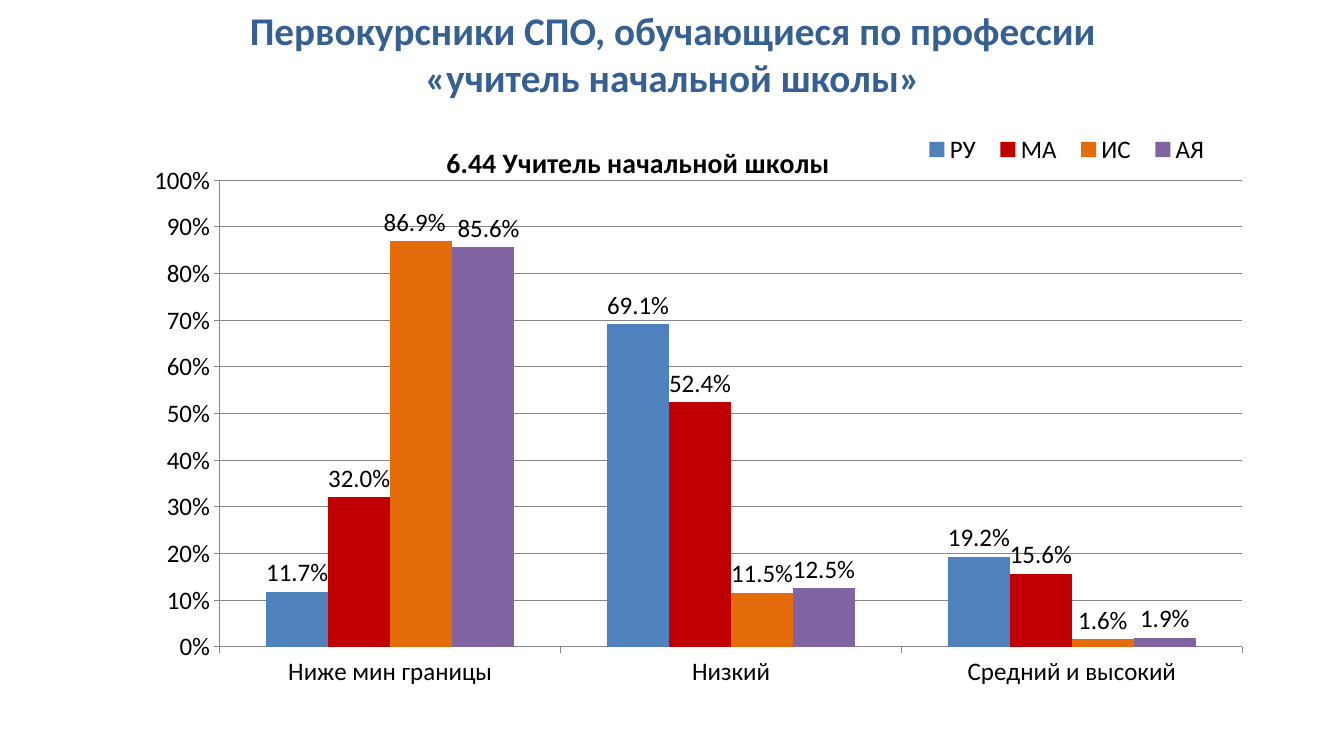
from lxml.etree import SubElement
from pptx import Presentation
from pptx.chart.data import CategoryChartData
from pptx.dml.color import RGBColor
from pptx.enum.chart import XL_CHART_TYPE, XL_LABEL_POSITION, XL_LEGEND_POSITION, XL_TICK_MARK
from pptx.enum.text import MSO_ANCHOR, MSO_AUTO_SIZE, PP_ALIGN
from pptx.oxml.ns import qn
from pptx.util import Inches, Pt

# Content
TITLE_LINES = ["Первокурсники СПО, обучающиеся по профессии", "«учитель начальной школы»"]
CHART_TITLE = "6.44 Учитель начальной школы"
CATEGORIES = ["Ниже мин границы", "Низкий", "Средний и высокий"]
SERIES = [  # name, values, colour, sideways shift of the first label
    ("РУ", (0.117, 0.691, 0.192), "4F81BD", 0),
    ("МА", (0.32, 0.524, 0.156), "C00000", 0),
    ("ИС", (0.869, 0.115, 0.016), "E46C0A", -0.006),
    ("АЯ", (0.856, 0.125, 0.019), "8064A2", 0.005),
]
LABEL_FORMAT = "###0.0%"

THEME = {
    "font": "Calibri",
    "title_color": "376092", "text_color": "000000", "line_color": "868686",
    "title_size": Pt(28), "chart_title_size": Pt(20), "chart_size": Pt(18),
}

# Places: left, top, width, height
TITLE_BOX = (1.24, 0.05, 10.86, 0.95)
CHART_BOX = (1.53, 1.14, 11.01, 5.73)
# Fractions of the chart
PLOT_LAYOUT = {"x": 0.048, "y": 0.113, "w": 0.932, "h": 0.808}
LEGEND_LAYOUT = {"x": 0.68, "y": 0.03, "w": 0.28, "h": 0.06}
CHART_TITLE_LAYOUT = {"x": 0.25, "y": 0.04}


def color(name):
    return RGBColor.from_string(THEME[name])


def set_layout(element, index, fractions, edge=True, inner=False):
    """Place a chart part by hand; the layout becomes child number index."""
    for old_layout in element.findall(qn("c:layout")):
        element.remove(old_layout)
    layout = SubElement(element, qn("c:layout"))
    element.insert(index, layout)
    manual = SubElement(layout, qn("c:manualLayout"))
    if inner:
        SubElement(manual, qn("c:layoutTarget")).set("val", "inner")
    if edge:
        for mode in ("xMode", "yMode"):
            SubElement(manual, qn("c:" + mode)).set("val", "edge")
    for key, value in fractions.items():
        SubElement(manual, qn("c:" + key)).set("val", str(value))


def add_title(slide):
    title = slide.shapes.title
    title.left, title.top, title.width, title.height = map(Inches, TITLE_BOX)
    frame = title.text_frame
    frame.text = "\n".join(TITLE_LINES)
    frame.word_wrap = True
    frame.auto_size = MSO_AUTO_SIZE.NONE
    frame.vertical_anchor = MSO_ANCHOR.MIDDLE
    frame.margin_left = frame.margin_right = Inches(0.15)
    frame.margin_top = frame.margin_bottom = Inches(0.07)
    for paragraph in frame.paragraphs:
        paragraph.alignment = PP_ALIGN.CENTER
        paragraph.font.name = THEME["font"]
        paragraph.font.size = THEME["title_size"]
        paragraph.font.bold = True
        paragraph.font.color.rgb = color("title_color")


def format_series(series, series_color, shift):
    series.format.fill.solid()
    series.format.fill.fore_color.rgb = RGBColor.from_string(series_color)
    series.invert_if_negative = False
    labels = series.data_labels
    labels.show_value = True
    labels.number_format = LABEL_FORMAT
    labels.number_format_is_linked = False
    labels.position = XL_LABEL_POSITION.OUTSIDE_END
    if shift:
        series.points[0].data_label.position = XL_LABEL_POSITION.OUTSIDE_END
        label = labels._element.find(qn("c:dLbl"))
        set_layout(label, 1, {"x": shift, "y": 0}, edge=False)
        number_format = SubElement(label, qn("c:numFmt"))
        number_format.set("formatCode", LABEL_FORMAT)
        number_format.set("sourceLinked", "0")
        label.insert(2, number_format)


def add_chart(slide):
    data = CategoryChartData(number_format="0.0%")
    data.categories = CATEGORIES
    for name, values, _, _ in SERIES:
        data.add_series(name, values)
    chart = slide.shapes.add_chart(
        XL_CHART_TYPE.COLUMN_CLUSTERED, *map(Inches, CHART_BOX), data).chart
    chart.font.name = THEME["font"]
    chart.font.size = THEME["chart_size"]
    chart.font.color.rgb = color("text_color")

    # Columns
    plot = chart.plots[0]
    plot.gap_width = 150
    plot.overlap = 0
    plot.vary_by_categories = False
    for series, (_, _, series_color, shift) in zip(plot.series, SERIES):
        format_series(series, series_color, shift)
    plot_area = chart._chartSpace.chart.plotArea
    set_layout(plot_area, 0, PLOT_LAYOUT, inner=True)

    # Axes
    value_axis, category_axis = chart.value_axis, chart.category_axis
    value_axis.minimum_scale, value_axis.maximum_scale = 0, 1
    value_axis.major_unit = 0.1
    value_axis.tick_labels.number_format = "0%"
    value_axis.tick_labels.number_format_is_linked = False
    value_axis.has_major_gridlines = True
    for axis in (value_axis, category_axis):
        axis.major_tick_mark = XL_TICK_MARK.OUTSIDE
    for lined_part in (value_axis, category_axis, value_axis.major_gridlines):
        lined_part.format.line.color.rgb = color("line_color")
        lined_part.format.line.width = Pt(0.75)

    # Chart title and legend
    chart.has_title = True
    chart_title = chart.chart_title
    chart_title.text_frame.text = CHART_TITLE
    title_font = chart_title.text_frame.paragraphs[0].font
    title_font.name = THEME["font"]
    title_font.size = THEME["chart_title_size"]
    title_font.bold = True
    title_font.color.rgb = color("text_color")
    set_layout(chart_title._element, 1, CHART_TITLE_LAYOUT)
    chart.has_legend = True
    chart.legend.position = XL_LEGEND_POSITION.RIGHT
    chart.legend.include_in_layout = False
    set_layout(chart.legend._element, 1, LEGEND_LAYOUT)


def main():
    presentation = Presentation()
    presentation.slide_width, presentation.slide_height = Inches(13.33), Inches(7.5)
    slide = presentation.slides.add_slide(presentation.slide_layouts[5])
    add_title(slide)
    add_chart(slide)
    presentation.save("out.pptx")


if __name__ == "__main__":
    main()
